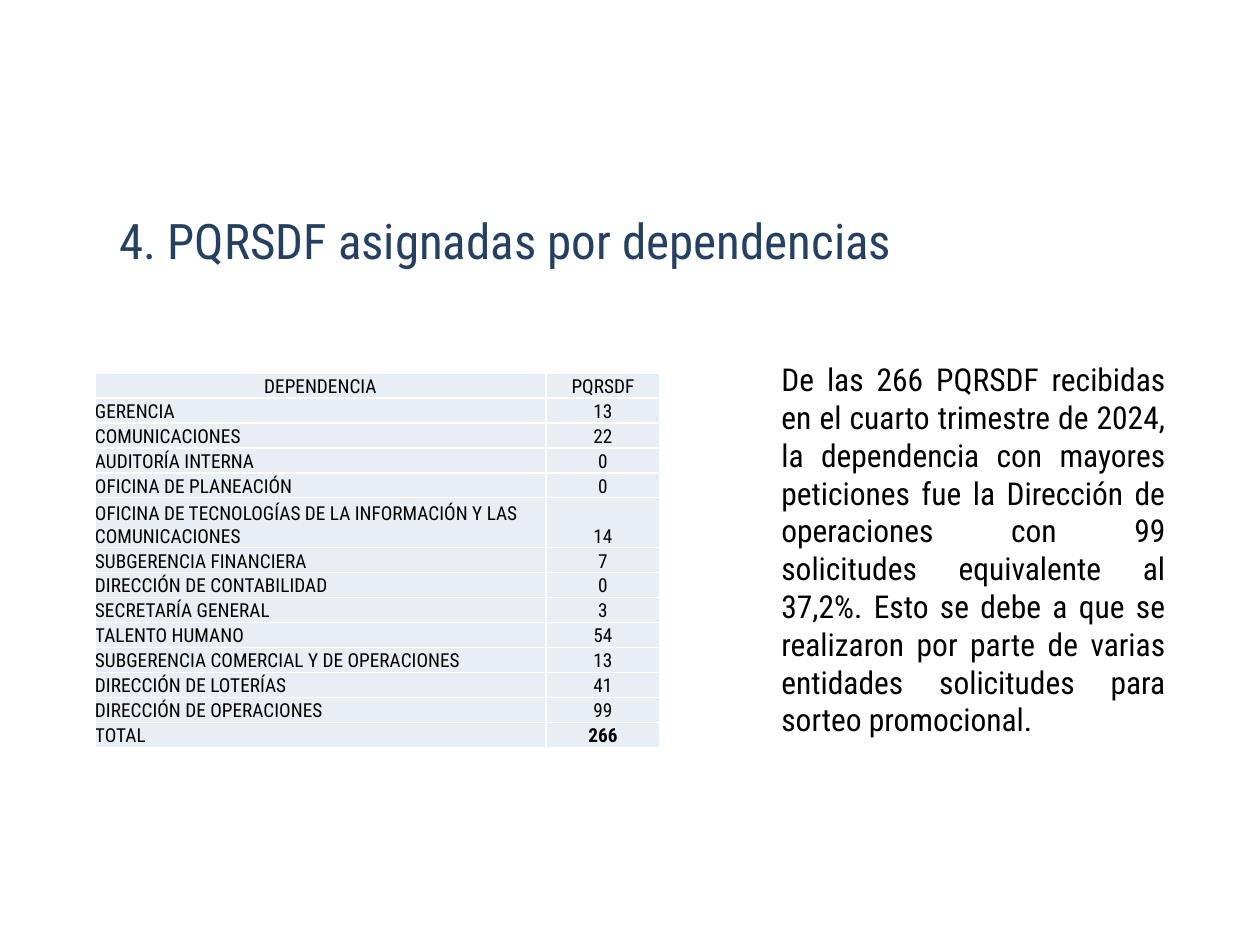
from dataclasses import dataclass

from lxml.etree import SubElement
from pptx import Presentation
from pptx.dml.color import RGBColor
from pptx.enum.text import MSO_ANCHOR as Anchor, MSO_AUTO_SIZE as AutoSize, PP_ALIGN as Align
from pptx.oxml.ns import qn
from pptx.slide import Slide
from pptx.util import Emu, Pt

FONT = "Roboto Condensed"
COLORS = {"title": "254061", "text": "000000", "cell": "E9EDF4", "border": "FFFFFF"}
ROW_HEIGHT = 25
COLUMN_WIDTHS = (451, 114)


@dataclass
class TextBlock:
    left: int
    top: int
    width: int
    height: int
    text: str
    size: int
    color: str
    align: Align = Align.LEFT
    spacing: float = 1.0
    indent: int = 0


@dataclass
class Department:
    name: str
    requests: int
    lines: int = 1


BLOCKS = [
    TextBlock(44, 175, 876, 91, "4. PQRSDF asignadas por dependencias", 28, "title",
              spacing=1.5, indent=63),
    TextBlock(769, 354, 409, 394,
              "De las 266 PQRSDF recibidas en el cuarto trimestre de 2024, la dependencia con "
              "mayores peticiones fue la Dirección de operaciones con 99 solicitudes equivalente "
              "al 37,2%. Esto se debe a que se realizaron por parte de varias entidades "
              "solicitudes para sorteo promocional.", 18, "text", align=Align.JUSTIFY),
]
DEPARTMENTS = [
    Department("GERENCIA", 13),
    Department("COMUNICACIONES", 22),
    Department("AUDITORÍA INTERNA", 0),
    Department("OFICINA DE PLANEACIÓN", 0),
    Department("OFICINA DE TECNOLOGÍAS DE LA INFORMACIÓN Y LAS COMUNICACIONES", 14, lines=2),
    Department("SUBGERENCIA FINANCIERA", 7),
    Department("DIRECCIÓN DE CONTABILIDAD", 0),
    Department("SECRETARÍA GENERAL", 3),
    Department("TALENTO HUMANO", 54),
    Department("SUBGERENCIA COMERCIAL Y DE OPERACIONES", 13),
    Department("DIRECCIÓN DE LOTERÍAS", 41),
    Department("DIRECCIÓN DE OPERACIONES", 99),
]


def px(length: int) -> Emu:
    return Emu(round(length * 914400 / 126))


def style_paragraph(para, size: int, color: str, align: Align, bold: bool = False) -> None:
    para.alignment = align
    para.font.name = FONT
    para.font.size = Pt(size)
    para.font.bold = bold
    para.font.color.rgb = RGBColor.from_string(COLORS[color])


def add_text(page: Slide, block: TextBlock) -> None:
    box = page.shapes.add_textbox(px(block.left), px(block.top), px(block.width), px(block.height))
    frame = box.text_frame
    frame.word_wrap = True
    frame.auto_size = AutoSize.SHAPE_TO_FIT_TEXT
    para = frame.paragraphs[0]
    para.text = block.text
    para.line_spacing = block.spacing
    if block.indent:
        para.level = 1
        properties = para._p.get_or_add_pPr()
        properties.set("marL", str(px(block.indent)))
        properties.set("indent", "0")
    style_paragraph(para, block.size, block.color, block.align)


def set_borders(cell) -> None:
    """Draw a thin line on all four sides; call before the cell's fill is set."""
    properties = cell._tc.get_or_add_tcPr()
    for side in ("a:lnL", "a:lnR", "a:lnT", "a:lnB"):
        line = SubElement(properties, qn(side), w=str(Pt(1)))
        fill = SubElement(line, qn("a:solidFill"))
        SubElement(fill, qn("a:srgbClr"), val=COLORS["border"])


def fill_cell(cell, text: str, align: Align, bold: bool) -> None:
    set_borders(cell)
    cell.fill.solid()
    cell.fill.fore_color.rgb = RGBColor.from_string(COLORS["cell"])
    cell.margin_left = cell.margin_right = cell.margin_top = cell.margin_bottom = 0
    cell.vertical_anchor = Anchor.BOTTOM
    para = cell.text_frame.paragraphs[0]
    para.text = text
    style_paragraph(para, 11, "text", align, bold)


def add_department_table(page: Slide, left: int, top: int) -> None:
    total = Department("TOTAL", sum(item.requests for item in DEPARTMENTS))
    body = [*DEPARTMENTS, total]
    rows = [("DEPENDENCIA", "PQRSDF"), *((item.name, str(item.requests)) for item in body)]
    heights = [ROW_HEIGHT, *(ROW_HEIGHT * item.lines for item in body)]
    table = page.shapes.add_table(len(rows), len(COLUMN_WIDTHS), px(left), px(top),
                                  px(sum(COLUMN_WIDTHS)), px(sum(heights))).table
    table.horz_banding = False
    for column, width in zip(table.columns, COLUMN_WIDTHS):
        column.width = px(width)
    for r, (texts, height) in enumerate(zip(rows, heights)):
        table.rows[r].height = px(height)
        for c, text in enumerate(texts):
            align = Align.CENTER if r == 0 or c == 1 else Align.LEFT
            fill_cell(table.cell(r, c), text, align, bold=r == len(rows) - 1 and c == 1)


def main() -> None:
    deck = Presentation()
    deck.slide_width, deck.slide_height = px(1260), px(945)
    page = deck.slides.add_slide(deck.slide_layouts[6])
    for block in BLOCKS:
        add_text(page, block)
    add_department_table(page, 95, 373)
    deck.save("out.pptx")


if __name__ == "__main__":
    main()
